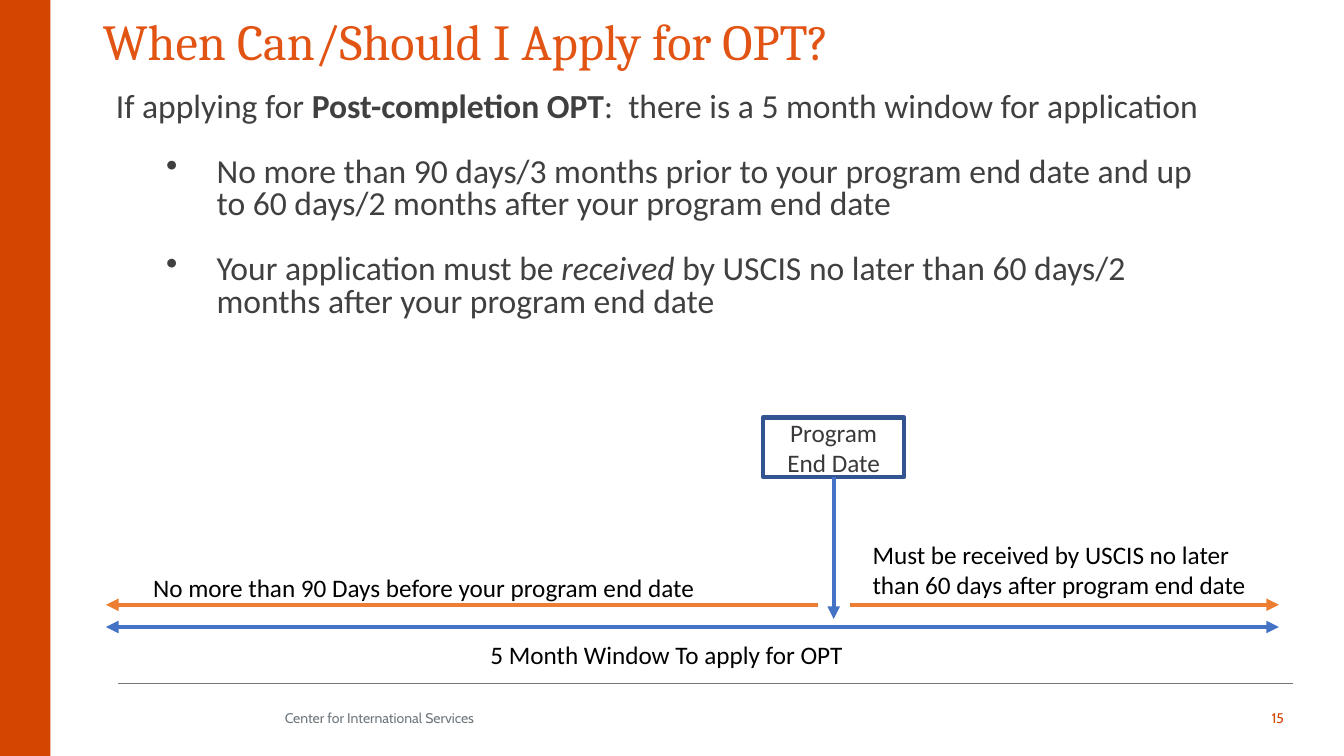
from dataclasses import dataclass

from lxml import etree
from pptx import Presentation
from pptx import util as u
from pptx.dml.color import RGBColor
from pptx.enum import shapes, text
from pptx.oxml.ns import qn

LEFT, CENTER, RIGHT = text.PP_ALIGN.LEFT, text.PP_ALIGN.CENTER, text.PP_ALIGN.RIGHT
TOP, MIDDLE = text.MSO_ANCHOR.TOP, text.MSO_ANCHOR.MIDDLE


@dataclass(frozen=True)
class Theme:
    bar: str = "D44500"
    title: str = "E25414"
    body: str = "404040"
    box_text: str = "3B3838"
    box_line: str = "325491"
    label: str = "000000"
    footer: str = "6F777D"
    blue: str = "4472C4"
    orange: str = "ED7D31"
    title_size: int = 36
    body_size: int = 24
    label_size: int = 18
    footer_size: int = 10
    arrow_width: float = 3
    rule_width: float = 0.5


@dataclass(frozen=True)
class Style:
    font: str
    size: int
    color: str
    align: text.PP_ALIGN = LEFT


@dataclass(frozen=True)
class Span:
    words: str
    bold: bool = False
    italic: bool = False


@dataclass(frozen=True)
class Label:
    words: str
    area: tuple[float, float, float, float]
    style: Style
    anchor: text.MSO_ANCHOR = TOP


@dataclass(frozen=True)
class Line:
    start: tuple[float, float]
    end: tuple[float, float]
    color: str
    width: float
    arrows: tuple[str, ...] = ()


THEME = Theme()
TITLE = Style("Cambria", THEME.title_size, THEME.title)
BODY = Style("Calibri", THEME.body_size, THEME.body)
BOX = Style("Calibri", THEME.label_size, THEME.box_text, CENTER)
NOTE = Style("Calibri", THEME.label_size, THEME.label)
WINDOW = Style("Calibri", THEME.label_size, THEME.label, CENTER)
FOOTER = Style("Cabin", THEME.footer_size, THEME.footer)
NUMBER = Style("Cabin", THEME.footer_size, THEME.bar, RIGHT)

# Timeline geometry in centimetres
START, FINISH, END_DATE = 2.67, 32.23, 21.01
PHASE_Y, WINDOW_Y = 15.24, 15.8

LABELS = [
    Label("No more than 90 Days before your program end date", (3.61, 14.3, 14.38, 1.02), NOTE),
    Label("Must be received by USCIS no later than 60 days after program end date",
          (21.74, 13.46, 10.16, 1.8), NOTE),
    Label("5 Month Window To apply for OPT", (3.91, 15.98, 25.78, 1.04), WINDOW),
    Label("Center for International Services", (6.93, 17.58, 23.98, 1.02), FOOTER, MIDDLE),
    Label("15", (30.91, 17.58, 1.7, 1.02), NUMBER, MIDDLE),
]
LINES = [
    Line((2.97, 17.22), (32.59, 17.22), THEME.footer, THEME.rule_width),
    Line((20.62, PHASE_Y), (START, PHASE_Y), THEME.orange, THEME.arrow_width, ("tailEnd",)),
    Line((21.41, PHASE_Y), (FINISH, PHASE_Y), THEME.orange, THEME.arrow_width, ("tailEnd",)),
    Line((START, WINDOW_Y), (FINISH, WINDOW_Y), THEME.blue, THEME.arrow_width,
         ("headEnd", "tailEnd")),
]
INTRO = [Span("If applying for "), Span("Post-completion OPT", bold=True),
         Span(":  there is a 5 month window for application")]
BULLETS = [
    [Span("No more than 90 days/3 months prior to your program end date "
          "and up to 60 days/2 months after your program end date")],
    [Span("Your application must be "), Span("received", italic=True),
     Span(" by USCIS no later than 60 days/2 months after your program end date")],
]


def cm(lengths: tuple[float, ...]) -> list[u.Length]:
    return [u.Cm(length) for length in lengths]


def write(para, spans: list[Span], style: Style) -> None:
    para.alignment = style.align
    for span in spans:
        run = para.add_run()
        run.text = span.words
        run.font.name = style.font
        run.font.size = u.Pt(style.size)
        run.font.bold = span.bold
        run.font.italic = span.italic
        run.font.color.rgb = RGBColor.from_string(style.color)


def add_label(page, label: Label) -> None:
    frame = page.shapes.add_textbox(*cm(label.area)).text_frame
    frame.word_wrap = True
    frame.vertical_anchor = label.anchor
    write(frame.paragraphs[0], [Span(label.words)], label.style)


def add_line(page, line: Line):
    connector = page.shapes.add_connector(
        shapes.MSO_CONNECTOR.STRAIGHT, *cm(line.start + line.end))
    connector.line.color.rgb = RGBColor.from_string(line.color)
    connector.line.width = u.Pt(line.width)
    outline = connector.line._get_or_add_ln()
    for arrow in line.arrows:
        etree.SubElement(outline, qn(f"a:{arrow}"), type="triangle")
    etree.SubElement(connector._element.spPr, qn("a:effectLst"))
    return connector


def add_rectangle(page, area: tuple[float, float, float, float]):
    box = page.shapes.add_shape(shapes.MSO_SHAPE.RECTANGLE, *cm(area))
    box.shadow.inherit = False
    return box


def add_title(page) -> None:
    title = page.shapes.title
    title.left, title.top, title.width, title.height = cm((2.34, 0.13, 27.91, 2.34))
    frame = title.text_frame
    frame.auto_size = text.MSO_AUTO_SIZE.NONE
    frame.vertical_anchor = TOP
    write(frame.paragraphs[0], [Span("When Can/Should I Apply for OPT?")], TITLE)


def add_body(page) -> None:
    frame = page.shapes.add_textbox(*cm((2.67, 2.21, 28.24, 6.83))).text_frame
    frame.word_wrap = True
    intro = frame.paragraphs[0]
    intro.line_spacing = 0.8
    write(intro, INTRO, BODY)
    for spans in BULLETS:
        para = frame.add_paragraph()
        properties = para._p.get_or_add_pPr()
        properties.set("marL", str(u.Cm(2.54)))
        properties.set("indent", str(-u.Cm(1.27)))
        etree.SubElement(properties, qn("a:buChar"), char="•")
        para.level = 1
        para.line_spacing = 0.8
        para.space_before = u.Pt(23.4)
        write(para, spans, BODY)


def add_end_date(page) -> None:
    box = add_rectangle(page, (19.23, 10.52, 3.56, 1.5))
    box.fill.background()
    box.line.color.rgb = RGBColor.from_string(THEME.box_line)
    box.line.width = u.Pt(THEME.arrow_width)
    box.text_frame.word_wrap = True
    box.text_frame.vertical_anchor = MIDDLE
    write(box.text_frame.paragraphs[0], [Span("Program End Date")], BOX)
    pointer = add_line(page, Line((END_DATE, 12.02), (END_DATE, 15.6), THEME.blue,
                                  THEME.arrow_width, ("tailEnd",)))
    pointer.begin_connect(box, 2)


def main() -> None:
    deck = Presentation()
    deck.slide_width, deck.slide_height = cm((33.87, 19.05))
    page = deck.slides.add_slide(deck.slide_layouts[5])

    # Side bar
    bar = add_rectangle(page, (0, 0, 1.27, 19.05))
    bar.fill.solid()
    bar.fill.fore_color.rgb = RGBColor.from_string(THEME.bar)
    bar.line.fill.background()

    # Title and explanation
    add_title(page)
    add_body(page)

    # Timeline and footer
    add_end_date(page)
    for line in LINES:
        add_line(page, line)
    for label in LABELS:
        add_label(page, label)

    deck.save("out.pptx")


if __name__ == "__main__":
    main()
